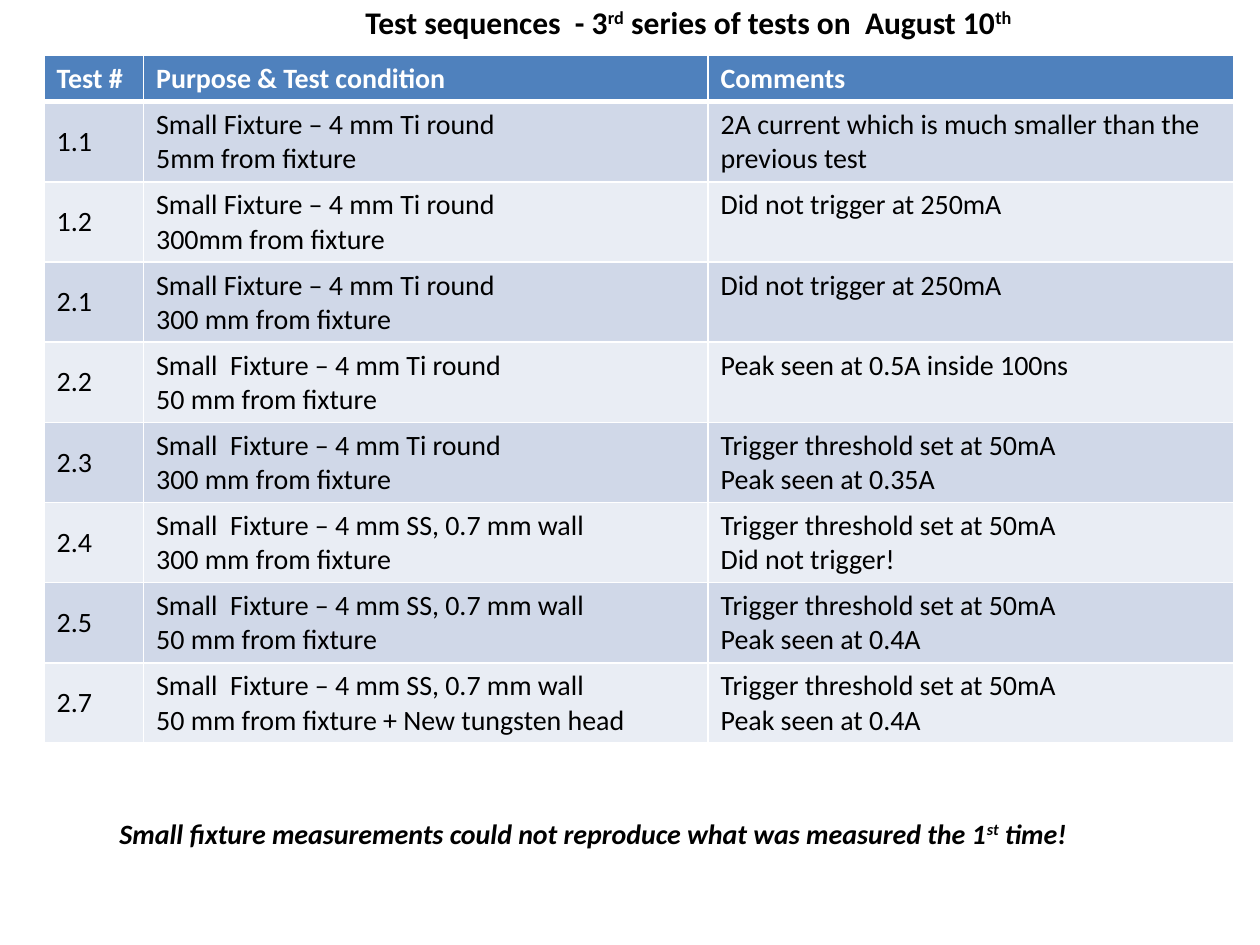
from pptx import Presentation
from pptx.dml.color import RGBColor as RGB
from pptx.enum.text import MSO_ANCHOR as ANCHOR, MSO_AUTO_SIZE as AUTO, PP_ALIGN as ALIGN
from pptx.oxml.ns import qn
from pptx.util import Inches, Pt
from lxml.etree import SubElement

TITLE = [("Test sequences  - 3", False), ("rd", True),
         (" series of tests on  August 10", False), ("th", True)]
CONCLUSION = [("Small fixture measurements could not reproduce what was measured the 1", False),
              ("st", True), (" time!", False)]
ROWS = [
    ("Test #", "Purpose & Test condition", "Comments"),
    ("1.1", "Small Fixture – 4 mm Ti round\n5mm from fixture",
     "2A current which is much smaller than the previous test"),
    ("1.2", "Small Fixture – 4 mm Ti round\n300mm from fixture", "Did not trigger at 250mA"),
    ("2.1", "Small Fixture – 4 mm Ti round\n300 mm from fixture", "Did not trigger at 250mA"),
    ("2.2", "Small  Fixture – 4 mm Ti round\n50 mm from fixture", "Peak seen at 0.5A inside 100ns"),
    ("2.3", "Small  Fixture – 4 mm Ti round\n300 mm from fixture",
     "Trigger threshold set at 50mA\nPeak seen at 0.35A"),
    ("2.4", "Small  Fixture – 4 mm SS, 0.7 mm wall\n300 mm from fixture",
     "Trigger threshold set at 50mA\nDid not trigger!"),
    ("2.5", "Small  Fixture – 4 mm SS, 0.7 mm wall\n50 mm from fixture",
     "Trigger threshold set at 50mA\nPeak seen at 0.4A"),
    ("2.7", "Small  Fixture – 4 mm SS, 0.7 mm wall\n50 mm from fixture + New tungsten head",
     "Trigger threshold set at 50mA\nPeak seen at 0.4A"),
]
COL_WIDTHS = (0.79, 4.48, 4.17)
TABLE_HEIGHT, HEADER_HEIGHT = 5.45, 0.36

THEME = {
    "font": "Calibri", "title": 18, "body": 16,
    "text": "000000", "white": "FFFFFF",
    "header": "4F81BD", "bands": ("E9EDF4", "D0D8E8"),
    "border": 1, "header_border": 3,
}


def style(r, size, color, bold=False, italic=False):
    f = r.font
    f.name, f.size, f.bold, f.italic = THEME["font"], Pt(size), bold, italic
    f.color.rgb = RGB.from_string(color)


def write_line(sp, box, parts, size, italic=False):
    sp.left, sp.top, sp.width, sp.height = map(Inches, box)
    tf = sp.text_frame
    tf.word_wrap, tf.auto_size = True, AUTO.SHAPE_TO_FIT_TEXT
    tf.vertical_anchor = ANCHOR.TOP
    p = tf.paragraphs[0]
    p.alignment = ALIGN.LEFT
    for text, raised in parts:
        r = p.add_run()
        r.text = text
        style(r, size, THEME["text"], True, italic)
        if raised:
            r.font._element.set("baseline", "30000")


def set_borders(cell, row):
    tcPr = cell._tc.get_or_add_tcPr()
    thick = {"lnB": row == 0, "lnT": row == 1}
    for side in ("lnL", "lnR", "lnT", "lnB"):
        width = THEME["header_border" if thick.get(side) else "border"]
        ln = SubElement(tcPr, qn(f"a:{side}"), w=str(Pt(width)))
        fill = SubElement(ln, qn("a:solidFill"))
        SubElement(fill, qn("a:srgbClr"), val=THEME["white"])


def fill_cell(cell, text, row, col):
    header = row == 0
    cell.text_frame.text = text
    for p in cell.text_frame.paragraphs:
        for r in p.runs:
            style(r, THEME["body"], THEME["white" if header else "text"], header)
    cell.vertical_anchor = ANCHOR.MIDDLE if col == 0 and not header else ANCHOR.TOP
    set_borders(cell, row)
    cell.fill.solid()
    cell.fill.fore_color.rgb = RGB.from_string(THEME["header"] if header else THEME["bands"][row % 2])


def add_tests(slide):
    table = slide.shapes.add_table(len(ROWS), len(COL_WIDTHS), Inches(0.35), Inches(0.44),
                                   Inches(sum(COL_WIDTHS)), Inches(TABLE_HEIGHT)).table
    for column, width in zip(table.columns, COL_WIDTHS):
        column.width = Inches(width)
    body_height = (TABLE_HEIGHT - HEADER_HEIGHT) / (len(ROWS) - 1)
    for i, row in enumerate(ROWS):
        table.rows[i].height = Inches(body_height if i else HEADER_HEIGHT)
        for j, text in enumerate(row):
            fill_cell(table.cell(i, j), text, i, j)


def main():
    prs = Presentation()
    prs.slide_width, prs.slide_height = Inches(10), Inches(7.5)
    slide = prs.slides.add_slide(prs.slide_layouts[5])
    write_line(slide.shapes.title, (2.8, -0.03, 5.49, 0.4), TITLE, THEME["title"])
    add_tests(slide)
    box = (0.85, 6.43, 7.86, 0.37)
    sp = slide.shapes.add_textbox(*map(Inches, box))
    write_line(sp, box, CONCLUSION, THEME["body"], italic=True)
    prs.save("out.pptx")


if __name__ == "__main__":
    main()
